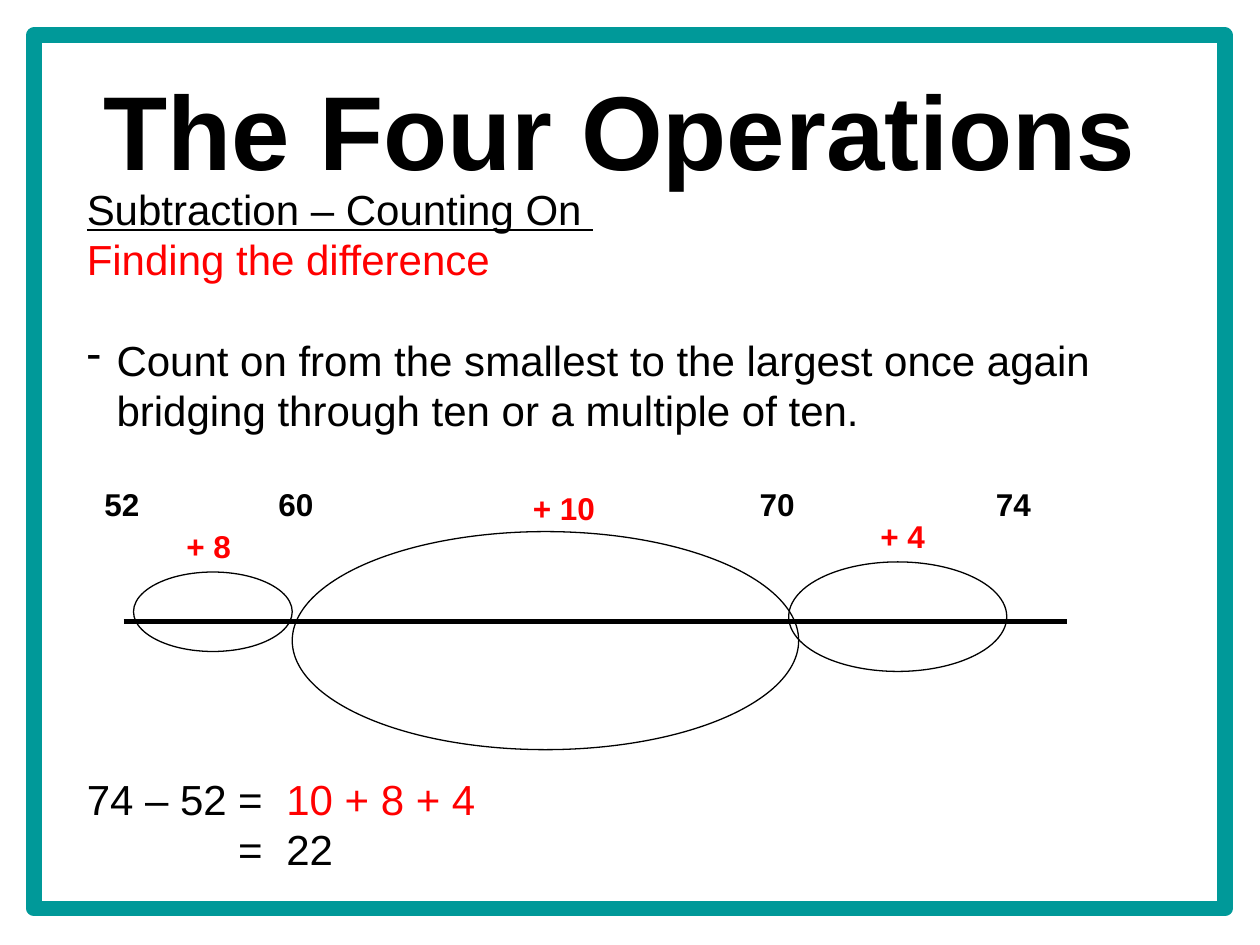
from lxml import etree
from pptx import Presentation
from pptx.dml.color import RGBColor
from pptx.enum import shapes, text
from pptx.oxml import ns
from pptx.util import Pt

COLORS = {"teal": "009999", "black": "000000", "red": "FF0000"}
LINE_HEIGHT = 1.196


def rgb(name):
    return RGBColor.from_string(COLORS[name])


def add_run(p, content, size=24, color="black", bold=False, underline=False):
    r = p.add_run()
    r.text = content
    f = r.font
    f.name, f.size, f.bold, f.underline = "Arial", Pt(size), bold, underline
    f.color.rgb = rgb(color)
    return r


def add_outline(s, kind, box, color="black", width=0.75):
    sp = s.shapes.add_shape(kind, *map(Pt, box))
    sp.shadow.inherit = False
    sp.fill.background()
    sp.line.color.rgb = rgb(color)
    sp.line.width = Pt(width)


def add_number_line(s, left, right, y):
    line = s.shapes.add_connector(
        shapes.MSO_CONNECTOR.STRAIGHT, Pt(left), Pt(y), Pt(right), Pt(y))
    line.line.color.rgb = rgb("black")
    line.line.width = Pt(3)
    etree.SubElement(line._element.spPr, ns.qn("a:effectLst"))


def add_text_box(s, box):
    tf = s.shapes.add_textbox(*map(Pt, box)).text_frame
    tf.word_wrap = True
    return tf


def add_paragraph(tf, runs, size=24, before=0, tabs=(), bullet=None):
    p = tf.paragraphs[0]
    if p.runs:
        p = tf.add_paragraph()
    p.line_spacing = Pt(round(size * LINE_HEIGHT, 1))
    p.space_before = Pt(before)
    pPr = p._p.get_or_add_pPr()
    if bullet:
        pPr.set("marL", str(Pt(17)))
        pPr.set("indent", str(-Pt(17)))
        etree.SubElement(pPr, ns.qn("a:buChar"), char=bullet)
    if tabs:
        stops = etree.SubElement(pPr, ns.qn("a:tabLst"))
        for pos in tabs:
            etree.SubElement(stops, ns.qn("a:tab"), pos=str(Pt(pos)), algn="l")
    for content, fmt in runs:
        add_run(p, content, size=size, **fmt)


def add_title(s, content):
    sp = s.shapes.title
    sp.left, sp.top, sp.width, sp.height = map(Pt, (36.7, 34, 635, 79))
    tf = sp.text_frame
    tf.auto_size = text.MSO_AUTO_SIZE.NONE
    tf.vertical_anchor = text.MSO_ANCHOR.MIDDLE
    p = tf.paragraphs[0]
    p.alignment = text.PP_ALIGN.CENTER
    add_run(p, content, size=60, bold=True)


def add_body(s):
    tf = add_text_box(s, (42.5, 101.5, 641, 407))
    red = {"color": "red"}
    sums = (86.5, 114)
    add_paragraph(tf, [("Subtraction – Counting On ", {"underline": True})])
    add_paragraph(tf, [("Finding the difference", red)])
    add_paragraph(tf, [("Count on from the smallest to the largest once again "
                        "bridging through ten or a multiple of ten.", {})],
                  before=28.7, bullet="-")
    add_paragraph(tf, [("\t52\t60\t70\t74", {"bold": True})],
                  size=18, before=28.7, tabs=(10, 109.5, 384.5, 519.5))
    add_paragraph(tf, [("74 – 52\t=\t", {}), ("10 + 8 + 4", red)],
                  before=143.5, tabs=sums)
    add_paragraph(tf, [("\t=\t22", {})], tabs=sums)


def add_jump(s, label, label_box, oval):
    add_outline(s, shapes.MSO_SHAPE.OVAL, oval)
    tf = add_text_box(s, label_box)
    add_paragraph(tf, [(label, {"color": "red", "bold": True})], size=18)


def main():
    prs = Presentation()
    prs.slide_width, prs.slide_height = Pt(720), Pt(540)
    s = prs.slides.add_slide(prs.slide_layouts[5])
    add_outline(s, shapes.MSO_SHAPE.RECTANGLE, (19.5, 20.2, 680.4, 499),
                color="teal", width=9)
    add_title(s, "The Four Operations")
    add_body(s)
    add_number_line(s, 70.6, 609.8, 355)
    jumps = [
        ("+ 8", (99.4, 298, 45.4, 28.8), (76.3, 326.9, 90.7, 45.4)),
        ("+ 10", (297.4, 275.8, 67.7, 28.8), (167, 303.8, 289.4, 124.6)),
        ("+ 4", (496, 292.3, 45.4, 28.8), (450.7, 321.1, 124.6, 62.6)),
    ]
    for jump in jumps:
        add_jump(s, *jump)
    prs.save("out.pptx")


if __name__ == "__main__":
    main()
